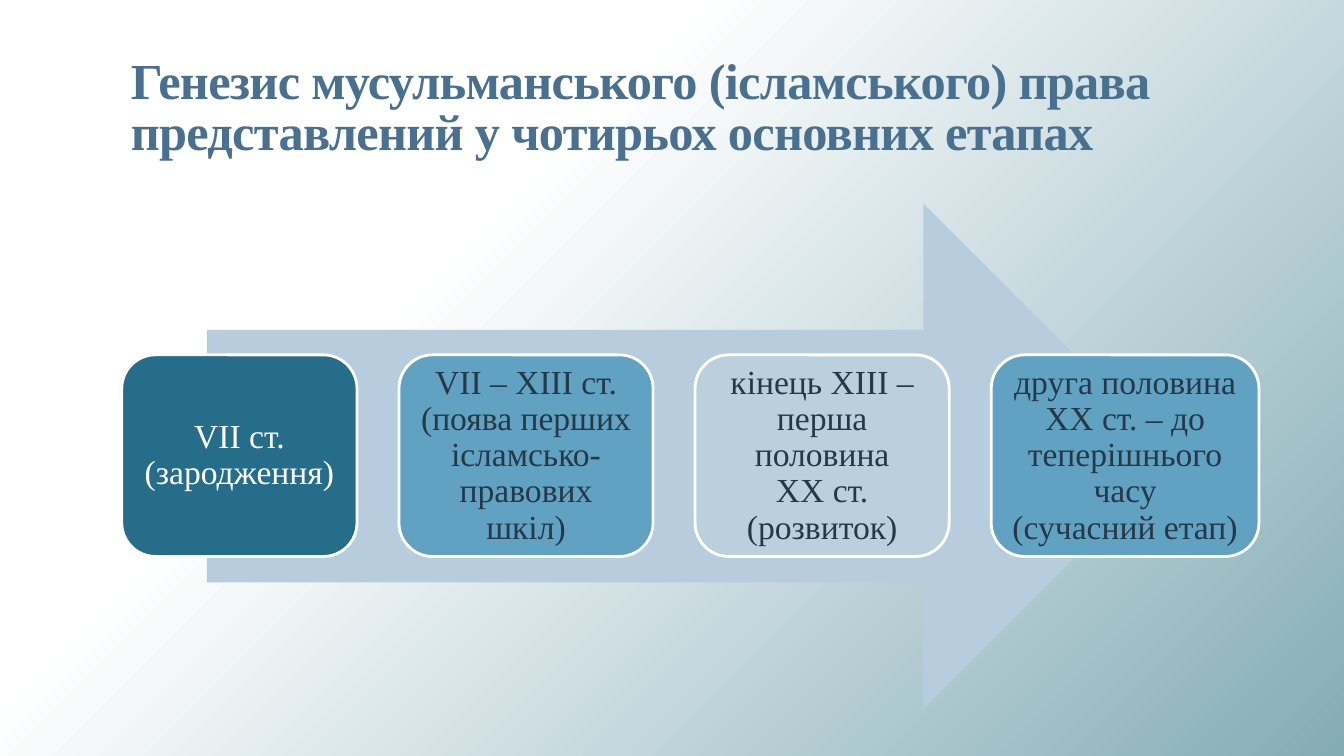
from copy import deepcopy
from typing import NamedTuple

from pptx import Presentation
from pptx.dml.color import RGBColor
from pptx.enum.shapes import MSO_SHAPE
from pptx.enum.text import MSO_ANCHOR, MSO_AUTO_SIZE, PP_ALIGN
from pptx.oxml.ns import qn
from pptx.shapes.autoshape import Shape
from pptx.slide import Slide
from pptx.util import Pt

PX = 9525
FONT = "Times New Roman"

ARROW, ROUNDED = MSO_SHAPE.RIGHT_ARROW, MSO_SHAPE.ROUNDED_RECTANGLE
LEFT, CENTER = PP_ALIGN.LEFT, PP_ALIGN.CENTER
MIDDLE, BOTTOM = MSO_ANCHOR.MIDDLE, MSO_ANCHOR.BOTTOM
NO_FIT = MSO_AUTO_SIZE.NONE

WHITE = RGBColor(0xFF, 0xFF, 0xFF)
MIST = RGBColor(0x84, 0xAC, 0xB6)
SLATE = RGBColor(0x4A, 0x70, 0x90)
PALE = RGBColor(0xB7, 0xCD, 0xDD)
TEAL = RGBColor(0x26, 0x6D, 0x8A)
BLUE = RGBColor(0x61, 0xA2, 0xC3)
LIGHT = RGBColor(0xBB, 0xCF, 0xDD)
DARK = RGBColor(0x25, 0x38, 0x48)

TITLE = "Генезис мусульманського (ісламського) права представлений у чотирьох основних етапах"
STAGE_LEFT, STAGE_TOP, STAGE_HEIGHT, STAGE_GAP = 116, 338, 192, 40


class Stage(NamedTuple):
    text: str
    width: int
    fill: RGBColor
    color: RGBColor


STAGES = [
    Stage("VII ст. (зародження)", 224, TEAL, WHITE),
    Stage("VII – XIII ст. (поява перших ісламсько-правових шкіл)", 242, BLUE, DARK),
    Stage("кінець ХІІІ – перша половина\nХХ ст. (розвиток)", 242, LIGHT, DARK),
    Stage("друга половина ХХ ст. – до теперішнього часу\n(сучасний етап)", 255, BLUE, DARK),
]


def paint_background(slide: Slide) -> None:
    fill = slide.background.fill
    fill.gradient()
    fill.gradient_angle = 315
    first = next(slide.element.iter(qn("a:gs")))
    first.addnext(deepcopy(first))
    for stop, (place, color) in zip(
        fill.gradient_stops, [(0, WHITE), (0.33, WHITE), (1, MIST)]
    ):
        stop.position = place
        stop.color.rgb = color


def write(shape: Shape, text: str, size: int, color: RGBColor, bold: bool,
          align: PP_ALIGN, anchor: MSO_ANCHOR, spacing: float) -> None:
    frame = shape.text_frame
    frame.word_wrap = True
    frame.auto_size = NO_FIT
    frame.vertical_anchor = anchor
    line = frame.paragraphs[0]
    line.text = text
    line.alignment = align
    line.line_spacing = spacing
    font = line.font
    font.name, font.size, font.bold = FONT, Pt(size), bold
    font.color.rgb = color


def add_title(slide: Slide) -> None:
    title = slide.shapes.title
    title.left, title.top = 115 * PX, 46 * PX
    title.width, title.height = 1056 * PX, 112 * PX
    write(title, TITLE, 36, SLATE, True, LEFT, BOTTOM, 0.85)
    for font in title.element.iter(qn("a:defRPr")):
        font.set("spc", "-50")


def add_block(slide: Slide, kind: MSO_SHAPE, left: int, top: int,
              width: int, height: int, fill: RGBColor) -> Shape:
    block = slide.shapes.add_shape(
        kind, left * PX, top * PX, width * PX, height * PX
    )
    block.shadow.inherit = False
    block.fill.solid()
    block.fill.fore_color.rgb = fill
    block.line.fill.background()
    return block


def add_stage(slide: Slide, stage: Stage, left: int) -> None:
    box = add_block(slide, ROUNDED, left, STAGE_TOP, stage.width, STAGE_HEIGHT, stage.fill)
    box.line.color.rgb = WHITE
    box.line.width = Pt(2)
    frame = box.text_frame
    frame.margin_left = frame.margin_right = 10 * PX
    frame.margin_top = frame.margin_bottom = 10 * PX
    write(box, stage.text, 24, stage.color, False, CENTER, MIDDLE, 0.9)


def main() -> None:
    deck = Presentation()
    deck.slide_width, deck.slide_height = 1280 * PX, 720 * PX
    slide = deck.slides.add_slide(deck.slide_layouts[5])
    paint_background(slide)
    add_title(slide)
    add_block(slide, ARROW, 197, 194, 923, 481, PALE)
    left = STAGE_LEFT
    for stage in STAGES:
        add_stage(slide, stage, left)
        left += stage.width + STAGE_GAP
    deck.save("out.pptx")


if __name__ == "__main__":
    main()
